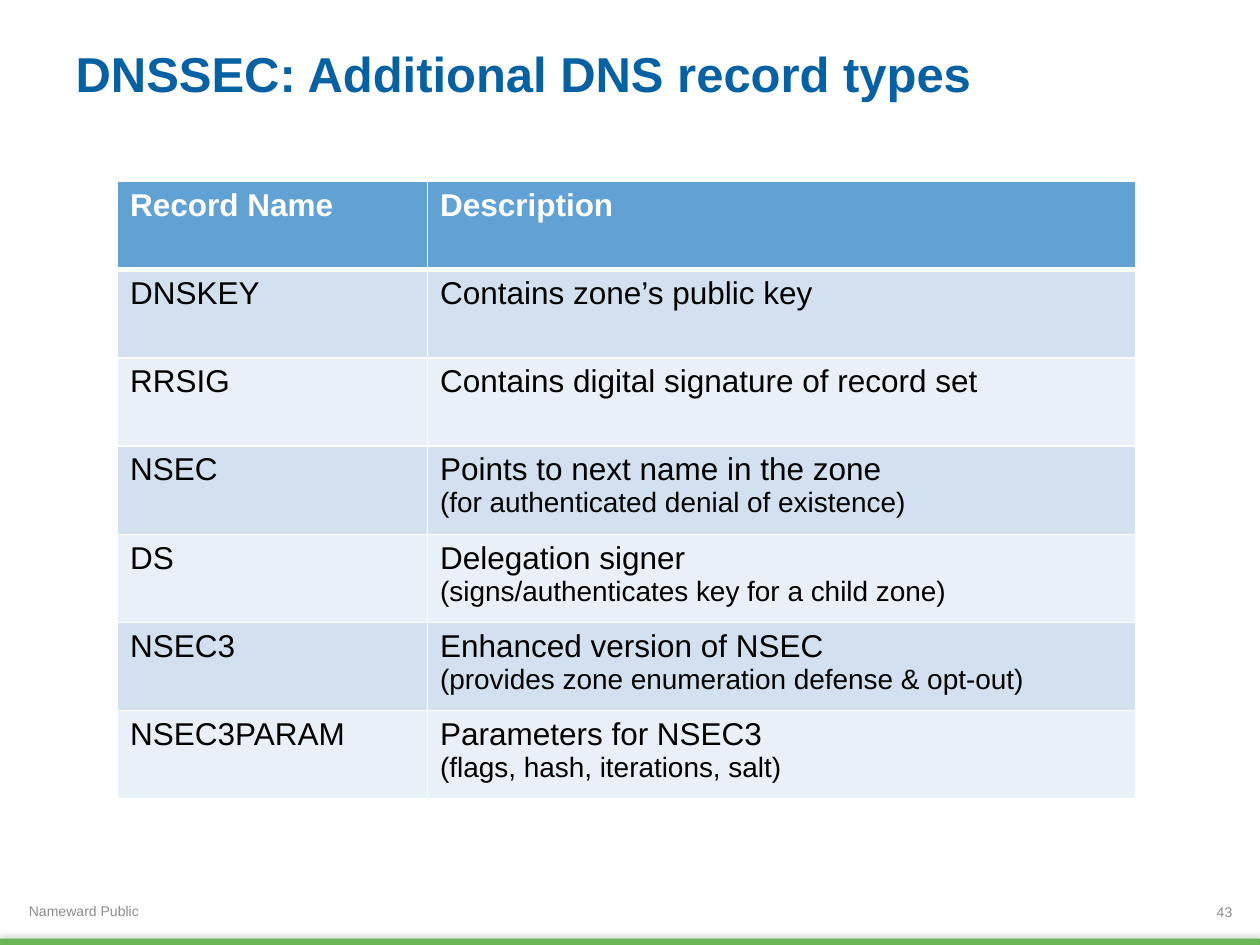
from dataclasses import dataclass

from lxml.etree import SubElement
from pptx import Presentation
from pptx.dml.color import RGBColor
from pptx.enum.shapes import MSO_SHAPE
from pptx.enum.text import MSO_ANCHOR, MSO_AUTO_SIZE, PP_ALIGN
from pptx.oxml import parse_xml
from pptx.oxml.ns import nsdecls, qn
from pptx.util import Pt


@dataclass(frozen=True)
class Theme:
    font: str = "Arial"
    title: str = "0661A3"
    header: str = "61A1D4"
    bands: tuple[str, str] = ("D2E0EF", "EAF0F7")
    white: str = "FFFFFF"
    black: str = "000000"
    muted: str = "8C8C8C"
    accent: str = "69B453"
    title_size: float = 28
    body_size: float = 18
    detail_size: float = 16
    footer_size: float = 8
    rule: float = 1
    header_rule: float = 3


@dataclass(frozen=True)
class Box:
    left: float
    top: float
    width: float
    height: float

    def lengths(self) -> tuple:
        return Pt(self.left), Pt(self.top), Pt(self.width), Pt(self.height)


@dataclass(frozen=True)
class Record:
    name: str
    description: str
    detail: str = ""


THEME = Theme()
SLIDE = Box(0, 0, 720, 540)
TITLE = Box(36, 19.5, 648, 44)
TABLE = Box(67.2, 103.7, 582, 352.8)
COLUMNS = (177.1, 404.9)
FOOTER = Box(9.4, 513.4, 239, 14.4)
PAGE_NUMBER = Box(683.3, 514.8, 28, 12.2)
BAR = Box(0, 536.4, 720, 3.6)

RECORDS = (
    Record("Record Name", "Description"),
    Record("DNSKEY", "Contains zone’s public key"),
    Record("RRSIG", "Contains digital signature of record set"),
    Record("NSEC", "Points to next name in the zone", "(for authenticated denial of existence)"),
    Record("DS", "Delegation signer", "(signs/authenticates key for a child zone)"),
    Record("NSEC3", "Enhanced version of NSEC", "(provides zone enumeration defense & opt-out)"),
    Record("NSEC3PARAM", "Parameters for NSEC3", "(flags, hash, iterations, salt)"),
)


def format_paragraph(paragraph, size: float, color: str, bold: bool = False,
                     align: PP_ALIGN = PP_ALIGN.LEFT) -> None:
    paragraph.alignment = align
    paragraph.font.name = THEME.font
    paragraph.font.size = Pt(size)
    paragraph.font.bold = bold
    paragraph.font.color.rgb = RGBColor.from_string(color)


def add_bar(slide, box: Box) -> None:
    bar = slide.shapes.add_shape(MSO_SHAPE.RECTANGLE, *box.lengths())
    bar.fill.solid()
    bar.fill.fore_color.rgb = RGBColor.from_string(THEME.accent)
    bar.line.fill.background()
    bar.shadow.inherit = False
    effects = bar.element.spPr.find(qn("a:effectLst"))
    effects.append(parse_xml(
        f'<a:outerShdw {nsdecls("a")} blurRad="{Pt(5)}" dist="0" dir="0" rotWithShape="0">'
        f'<a:srgbClr val="{THEME.black}"><a:alpha val="40000"/></a:srgbClr></a:outerShdw>'))


def add_footer_text(slide, box: Box, text: str, align: PP_ALIGN) -> None:
    frame = slide.shapes.add_textbox(*box.lengths()).text_frame
    frame.word_wrap = True
    frame.vertical_anchor = MSO_ANCHOR.MIDDLE
    frame.margin_top = frame.margin_bottom = 0
    frame.text = text
    format_paragraph(frame.paragraphs[0], THEME.footer_size, THEME.muted, align=align)


def set_title(slide, text: str) -> None:
    title = slide.shapes.title
    title.left, title.top, title.width, title.height = TITLE.lengths()
    frame = title.text_frame
    frame.text = text
    frame.word_wrap = True
    frame.auto_size = MSO_AUTO_SIZE.NONE
    frame.vertical_anchor = MSO_ANCHOR.MIDDLE
    format_paragraph(frame.paragraphs[0], THEME.title_size, THEME.title, bold=True)


def set_borders(cell, top: float, bottom: float) -> None:
    properties = cell._tc.get_or_add_tcPr()
    widths = {"lnL": THEME.rule, "lnR": THEME.rule, "lnT": top, "lnB": bottom}
    for side, width in widths.items():
        border = SubElement(properties, qn(f"a:{side}"), w=str(Pt(width)))
        fill = SubElement(border, qn("a:solidFill"))
        SubElement(fill, qn("a:srgbClr"), val=THEME.white)


def fill_cell(cell, lines: list[str], row: int) -> None:
    is_header = row == 0
    set_borders(cell,
                top=THEME.header_rule if row == 1 else THEME.rule,
                bottom=THEME.header_rule if is_header else THEME.rule)
    cell.fill.solid()
    cell.fill.fore_color.rgb = RGBColor.from_string(
        THEME.header if is_header else THEME.bands[(row - 1) % 2])
    cell.text = "\n".join(lines)
    sizes = (THEME.body_size, THEME.detail_size)
    for paragraph, size in zip(cell.text_frame.paragraphs, sizes):
        format_paragraph(paragraph, size, THEME.white if is_header else THEME.black, bold=is_header)


def add_record_table(slide, records: tuple[Record, ...]) -> None:
    table = slide.shapes.add_table(len(records), len(COLUMNS), *TABLE.lengths()).table
    for column, width in zip(table.columns, COLUMNS):
        column.width = Pt(width)
    for row, record in enumerate(records):
        fill_cell(table.cell(row, 0), [record.name], row)
        description = [record.description] + ([record.detail] if record.detail else [])
        fill_cell(table.cell(row, 1), description, row)


def main() -> None:
    presentation = Presentation()
    presentation.slide_width = Pt(SLIDE.width)
    presentation.slide_height = Pt(SLIDE.height)
    slide = presentation.slides.add_slide(presentation.slide_layouts[5])
    add_bar(slide, BAR)
    add_footer_text(slide, FOOTER, "Nameward Public", PP_ALIGN.LEFT)
    set_title(slide, "DNSSEC: Additional DNS record types")
    add_footer_text(slide, PAGE_NUMBER, "43", PP_ALIGN.RIGHT)
    add_record_table(slide, RECORDS)
    presentation.save("out.pptx")


if __name__ == "__main__":
    main()
